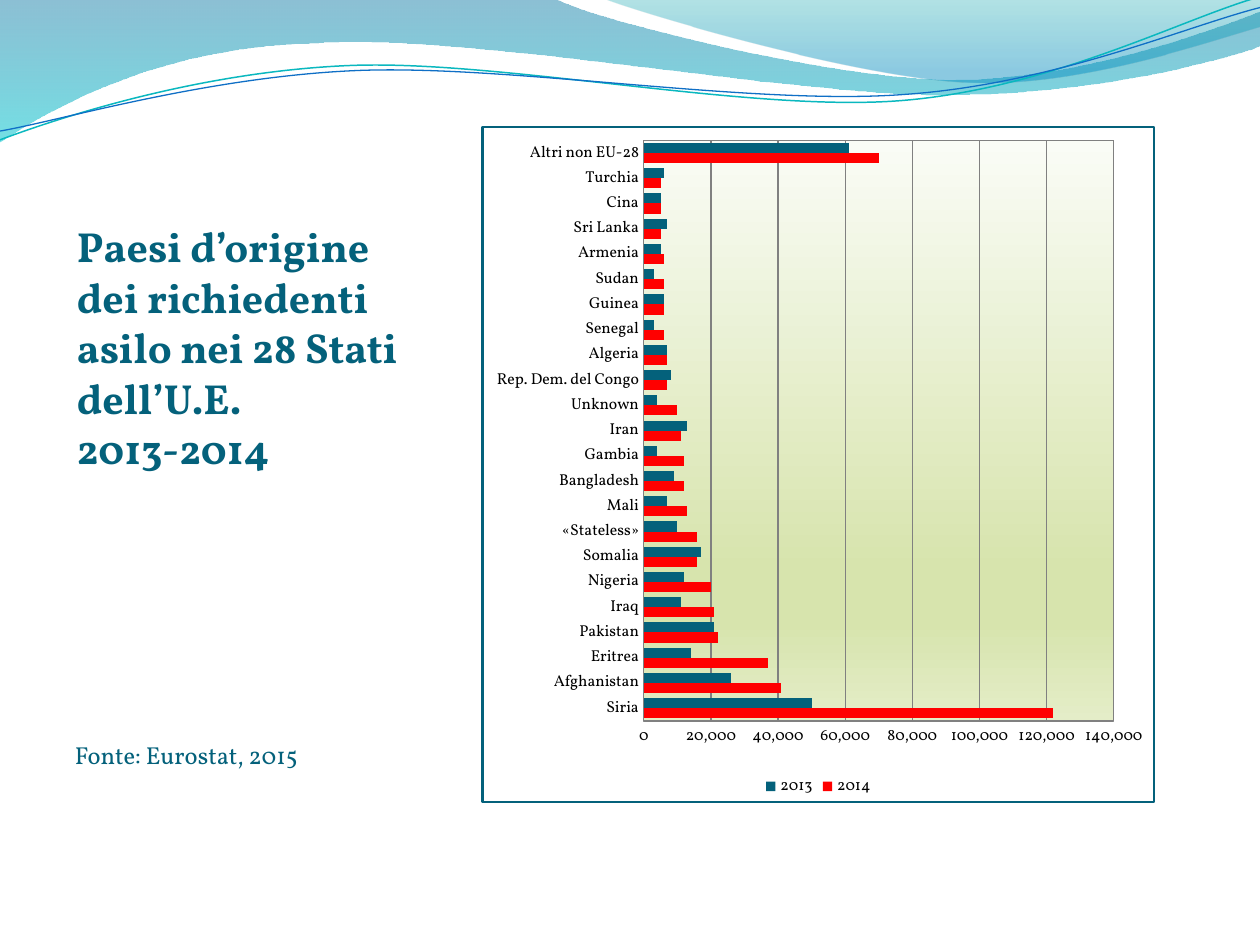
import math

import pptx
import pptx.chart.data
import pptx.dml.color
import pptx.enum.chart
import pptx.enum.text
import pptx.oxml
import pptx.oxml.ns
import pptx.util

W, H = 10, 7.5
FONT = "Vollkorn"
COLORS = {"dark": "04617B", "red": "FF0000", "grid": "808080", "black": "000000",
          "teal": "0AB8BF", "blue": "0F6FC6"}
NS = pptx.oxml.ns.nsdecls("a", "c")
qn = pptx.oxml.ns.qn

# Gradient stops: position %, colour, opacity %
BAND_FILL = [(0, "0074A1", 45), (100, "00C6CF", 55)]
CREST_FILL = [(0, "00A1A9", 30), (80, "008BBF", 45)]
PLOT_FILL = [(0, "FAFCF6", 100), (74, "D7E4AD", 100), (83, "D7E4AD", 100), (100, "E4EDC8", 100)]

# Wave outlines: a start point, then line ends (2 numbers) or Bézier curves (6 numbers)
BAND = [(0, 0), (4.4, -0.01), (4.76, 0.17, 6.64, 0.63, 7.58, 0.63),
        (8.53, 0.63, 9.58, 0.26, 10, 0.09), (10.01, 0.36),
        (9.83, 0.44, 8.7, 0.76, 7.46, 0.75), (6.22, 0.75, 3.82, 0.28, 2.57, 0.34),
        (1.29, 0.36, 0.46, 0.83, -0.01, 1.13)]
CREST = [(4.79, -0.01), (5.09, 0.11, 6.82, 0.62, 7.69, 0.65),
         (8.56, 0.69, 9.61, 0.32, 10, 0.21), (10, 0)]
TEAL_WAVE = [(0, 1.11), (0.48, 0.93, 1.58, 0.57, 2.77, 0.52),
             (3.95, 0.47, 5.93, 0.89, 7.13, 0.8), (8.33, 0.71, 9.38, 0.15, 9.98, -0.02)]
BLUE_WAVE = [(0, 1.04), (0.47, 0.96, 1.64, 0.61, 2.83, 0.56),
             (4.03, 0.51, 5.97, 0.84, 7.17, 0.75), (8.36, 0.67, 9.41, 0.21, 10, 0.06)]
WAVE_CENTER, WAVE_TILT = (4.99, 0.58), -2.7

# Country, applicants in 2014 and in 2013 (thousands)
APPLICANTS = [
    ("Siria", 122, 50), ("Afghanistan", 41, 26), ("Eritrea", 37, 14), ("Pakistan", 22, 21),
    ("Iraq", 21, 11), ("Nigeria", 20, 12), ("Somalia", 16, 17), ("«Stateless»", 16, 10),
    ("Mali", 13, 7), ("Bangladesh", 12, 9), ("Gambia", 12, 4), ("Iran", 11, 13),
    ("Unknown", 10, 4), ("Rep. Dem. del Congo", 7, 8), ("Algeria", 7, 7), ("Senegal", 6, 3),
    ("Guinea", 6, 6), ("Sudan", 6, 3), ("Armenia", 6, 5), ("Sri Lanka", 5, 7),
    ("Cina", 5, 5), ("Turchia", 5, 6), ("Altri non EU-28", 70, 61)]


def rgb(name):
    return pptx.dml.color.RGBColor.from_string(COLORS[name])


def box(x, y, w, h):
    """Turn shares of the slide's size into lengths."""
    return [pptx.util.Inches(v) for v in (x * W, y * H, w * W, h * H)]


def gradient(stops):
    """Top-to-bottom gradient fill."""
    gs = "".join(f'<a:gs pos="{pos * 1000}"><a:srgbClr val="{color}">'
                 f'<a:alpha val="{alpha * 1000}"/></a:srgbClr></a:gs>'
                 for pos, color, alpha in stops)
    return (f'<a:gradFill {NS} rotWithShape="1"><a:gsLst>{gs}</a:gsLst>'
            '<a:lin ang="5400000" scaled="0"/></a:gradFill>')


def turn(point, degrees):
    """Turn a point clockwise about the centre of the wave lines."""
    a = math.radians(degrees)
    cx, cy = WAVE_CENTER
    dx, dy = point[0] - cx, point[1] - cy
    return (cx + dx * math.cos(a) - dy * math.sin(a),
            cy + dx * math.sin(a) + dy * math.cos(a))


def add_outline(s, outline, closed, tilt):
    """Freeform whose six-number segments become cubic curves."""
    points = [turn(seg[i:i + 2], -tilt) for seg in outline for i in range(0, len(seg), 2)]
    emu = [(pptx.util.Inches(x), pptx.util.Inches(y)) for x, y in points]
    builder = s.shapes.build_freeform(*emu[0], scale=1.0)
    builder.add_line_segments(emu[1:], close=closed)
    sp = builder.convert_to_shape()
    lines = list(sp._element.iter(qn("a:lnTo")))
    for seg in outline[1:]:
        count = len(seg) // 2
        group, lines = lines[:count], lines[count:]
        if count == 3:
            curve = pptx.oxml.parse_xml(f"<a:cubicBezTo {NS}/>")
            group[0].addprevious(curve)
            for line in group:
                curve.append(line[0])
                line.getparent().remove(line)
    sp.rotation = tilt
    sp.shadow.inherit = False
    return sp


def add_band(s, outline, stops):
    sp = add_outline(s, outline, True, 0)
    sp.line.fill.background()
    sp.fill.background()
    old = sp._element.spPr.find(qn("a:noFill"))
    old.getparent().replace(old, pptx.oxml.parse_xml(gradient(stops)))


def add_wave_line(s, outline, color, width):
    sp = add_outline(s, outline, False, WAVE_TILT)
    sp.fill.background()
    sp.line.color.rgb = rgb(color)
    sp.line.width = pptx.util.Pt(width)


def style_font(font, size, color, bold=False):
    font.name, font.size, font.bold = FONT, pptx.util.Pt(size), bold
    font.color.rgb = rgb(color)


def write(tf, lines, size, bold, align):
    tf.text = "\n".join(lines)
    tf.word_wrap = True
    tf.vertical_anchor = pptx.enum.text.MSO_ANCHOR.TOP
    tf.auto_size = pptx.enum.text.MSO_AUTO_SIZE.SHAPE_TO_FIT_TEXT
    for p in tf.paragraphs:
        p.alignment = align
        p.space_before = pptx.util.Pt(0)
        style_font(p.font, size, "dark", bold)


def style_axes(chart):
    for axis in (chart.category_axis, chart.value_axis):
        axis.major_tick_mark = axis.minor_tick_mark = pptx.enum.chart.XL_TICK_MARK.NONE
        style_font(axis.tick_labels.font, 9, "black")
    value = chart.value_axis
    value.minimum_scale, value.maximum_scale, value.major_unit = 0, 140000, 20000
    value.tick_labels.number_format = "#,##0"
    value.tick_labels.number_format_is_linked = False
    value.format.line.fill.background()
    for line in (chart.category_axis.format.line, value.major_gridlines.format.line):
        line.color.rgb = rgb("grid")
        line.width = pptx.util.Pt(0.75)


def style_areas(chart):
    """Frame of the chart, place and fill of the plot."""
    space = chart._chartSpace
    plot_area = space.chart.plotArea
    for old in plot_area.findall(qn("c:layout")):
        plot_area.remove(old)
    place = "".join(f'<c:{tag} val="{val}"/>' for tag, val in (
        ("layoutTarget", "inner"), ("xMode", "edge"), ("yMode", "edge"),
        ("x", 0.24), ("y", 0.02), ("w", 0.7), ("h", 0.86)))
    plot_area.insert(0, pptx.oxml.parse_xml(
        f"<c:layout {NS}><c:manualLayout>{place}</c:manualLayout></c:layout>"))
    plot_area.append(pptx.oxml.parse_xml(
        f'<c:spPr {NS}>{gradient(PLOT_FILL)}<a:ln w="9525"><a:solidFill>'
        f'<a:srgbClr val="{COLORS["grid"]}"/></a:solidFill></a:ln></c:spPr>'))
    space.chart.addnext(pptx.oxml.parse_xml(
        f'<c:spPr {NS}><a:noFill/><a:ln w="19050"><a:solidFill>'
        f'<a:srgbClr val="{COLORS["dark"]}"/></a:solidFill></a:ln></c:spPr>'))


def add_bars(s, place):
    countries, in_2014, in_2013 = zip(*APPLICANTS)
    data = pptx.chart.data.CategoryChartData(number_format="#,##0")
    data.categories = countries
    for year, values in (("2014", in_2014), ("2013", in_2013)):
        data.add_series(year, [v * 1000 for v in values])
    kind = pptx.enum.chart.XL_CHART_TYPE.BAR_CLUSTERED
    chart = s.shapes.add_chart(kind, *place, data).chart
    chart.has_title = False
    style_font(chart.font, 10, "black")
    plot = chart.plots[0]
    plot.gap_width, plot.overlap, plot.vary_by_categories = 50, 0, False
    for series, color in zip(plot.series, ("red", "dark")):
        series.format.fill.solid()
        series.format.fill.fore_color.rgb = rgb(color)
    chart.has_legend = True
    chart.legend.position = pptx.enum.chart.XL_LEGEND_POSITION.BOTTOM
    chart.legend.include_in_layout = False
    style_font(chart.legend.font, 9, "black")
    style_axes(chart)
    style_areas(chart)


def main():
    prs = pptx.Presentation()
    prs.slide_width, prs.slide_height = pptx.util.Inches(W), pptx.util.Inches(H)
    s = prs.slides.add_slide(prs.slide_layouts[5])
    align = pptx.enum.text.PP_ALIGN

    # Waves along the top
    add_band(s, BAND, BAND_FILL)
    add_band(s, CREST, CREST_FILL)
    add_wave_line(s, TEAL_WAVE, "teal", 0.85)
    add_wave_line(s, BLUE_WAVE, "blue", 0.75)

    # Title and source
    title = s.shapes.title
    title.left, title.top, title.width, title.height = box(0.051, 0.227, 0.295, 0.283)
    write(title.text_frame, ["Paesi d’origine dei richiedenti asilo nei 28 Stati dell’U.E.",
                             "2013-2014"], 24, True, align.LEFT)
    source = s.shapes.add_textbox(*box(0.01, 0.776, 0.276, 0.045))
    write(source.text_frame, ["Fonte: Eurostat, 2015"], 14, False, align.CENTER)

    # Asylum applicants by country
    add_bars(s, box(0.382, 0.133, 0.535, 0.717))
    prs.save("out.pptx")


if __name__ == "__main__":
    main()
